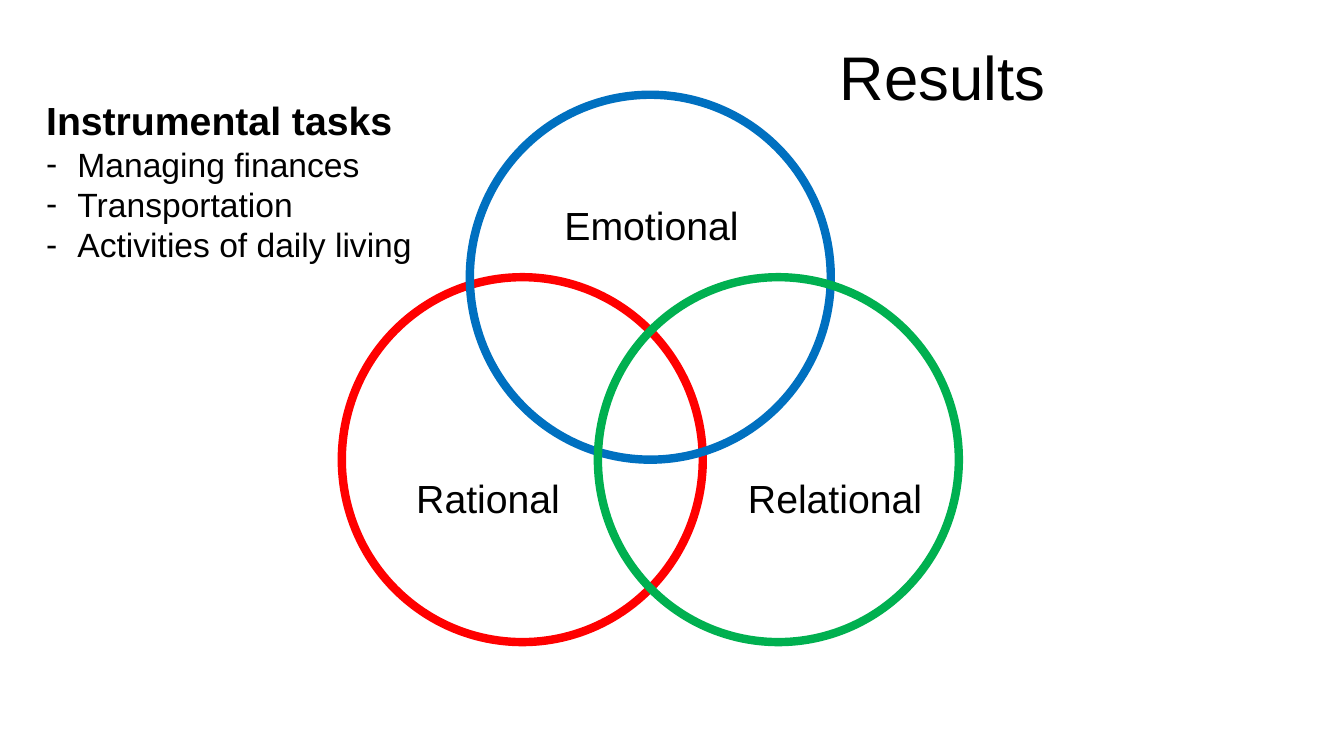
from lxml import etree
from pptx import Presentation
from pptx.dml.color import RGBColor
from pptx.enum import shapes, text
from pptx.oxml import ns
from pptx.util import Inches, Pt

FONT = "Arial"
BLACK = "000000"
LABEL_SIZE = 28


def color(hex_string):
    return RGBColor.from_string(hex_string)


def format_paragraph(paragraph, size, bold=False):
    for run in paragraph.runs:
        run.font.name = FONT
        run.font.size = Pt(size)
        run.font.bold = bold
        run.font.color.rgb = color(BLACK)


def add_text(slide, box, lines, size, wrap=False):
    frame = slide.shapes.add_textbox(*map(Inches, box)).text_frame
    frame.word_wrap = wrap
    frame.text = "\n".join(lines)
    for paragraph in frame.paragraphs:
        format_paragraph(paragraph, size)
    return frame


def add_dash(paragraph, indent):
    """Give the paragraph a hanging dash bullet."""
    properties = paragraph._p.get_or_add_pPr()
    properties.set("marL", str(Inches(indent)))
    properties.set("indent", str(-Inches(indent)))
    etree.SubElement(properties, ns.qn("a:buFont"), typeface=FONT)
    etree.SubElement(properties, ns.qn("a:buChar"), char="-")


def add_title(slide, box):
    frame = add_text(slide, box, ["Results"], 44, wrap=True)
    frame.vertical_anchor = text.MSO_ANCHOR.MIDDLE
    frame.paragraphs[0].line_spacing = 0.9


def add_task_list(slide, box):
    tasks = ["Managing finances", "Transportation", "Activities of daily living"]
    frame = add_text(slide, box, ["Instrumental tasks", *tasks], 24)
    heading, *items = frame.paragraphs
    format_paragraph(heading, LABEL_SIZE, bold=True)
    for item in items:
        add_dash(item, 0.31)


def add_venn(slide, box):
    """Draw three overlapping rings, then their labels on top."""
    left, top, width, height = box
    ring_width, ring_height = 3.58, 3.62
    step_x = (width - ring_width) / 2
    step_y = height - ring_height
    # name, colour, column, row, label offset within the ring, label width
    rings = [
        ("Rational", "FF0000", 0, 1, (0.64, 1.91), 1.65),
        ("Emotional", "0070C0", 1, 0, (0.84, 1.01), 1.95),
        ("Relational", "00B050", 2, 1, (1.39, 1.91), 1.95),
    ]
    labels = []
    for name, ring_color, column, row, (dx, dy), label_width in rings:
        x, y = left + column * step_x, top + row * step_y
        ring = slide.shapes.add_shape(
            shapes.MSO_SHAPE.OVAL, *map(Inches, (x, y, ring_width, ring_height)))
        ring.shadow.inherit = False
        ring.fill.background()
        ring.line.color.rgb = color(ring_color)
        ring.line.width = Pt(6)
        labels.append((name, (x + dx, y + dy, label_width, 0.57)))
    for name, label_box in labels:
        add_text(slide, label_box, [name], LABEL_SIZE)


def main():
    deck = Presentation()
    deck.slide_width, deck.slide_height = Inches(13.33), Inches(7.5)
    slide = deck.slides.add_slide(deck.slide_layouts[6])
    add_title(slide, (8.23, 0, 5.1, 1.59))
    add_venn(slide, (3.39, 0.94, 6.12, 5.43))
    add_task_list(slide, (0.36, 0.91, 3.87, 1.78))
    deck.save("out.pptx")


if __name__ == "__main__":
    main()
